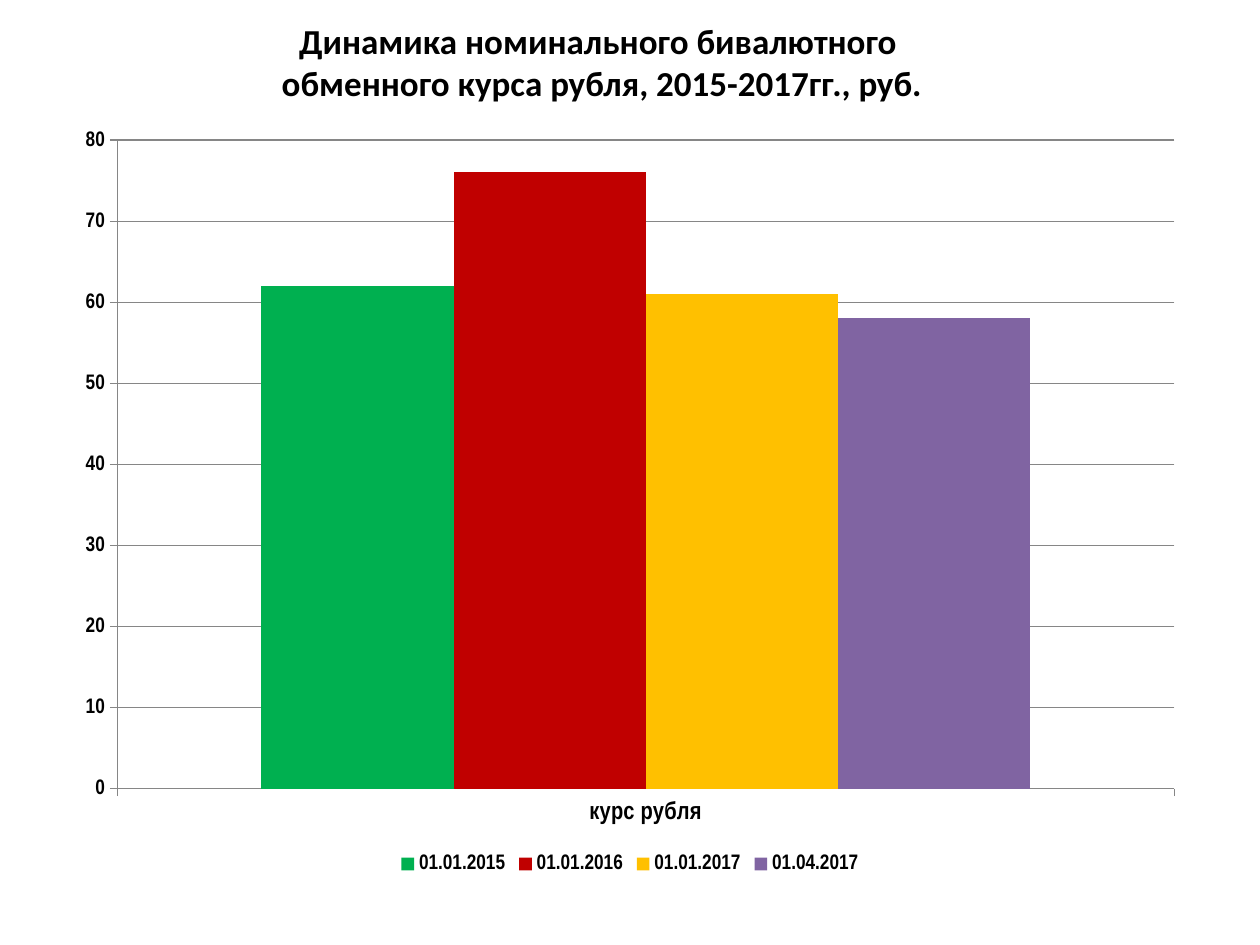
from dataclasses import dataclass

import pptx
import pptx.chart.data
import pptx.dml.color
import pptx.enum.chart
import pptx.enum.text
import pptx.util

EMU_PER_PX = 914400 / 126


@dataclass(frozen=True)
class Theme:
    text: str = "000000"
    background: str = "FFFFFF"
    line: str = "868686"
    title_font: str = "Calibri"
    chart_font: str = "Arial Narrow"
    title_size: int = 20
    category_size: int = 14
    label_size: int = 12
    base_size: int = 10


THEME = Theme()

RATES = [
    ("01.01.2015", 62, "00B050"),
    ("01.01.2016", 76, "C00000"),
    ("01.01.2017", 61, "FFC000"),
    ("01.04.2017", 58, "8064A2"),
]


def px(length):
    return pptx.util.Emu(round(length * EMU_PER_PX))


def color(value):
    return pptx.dml.color.RGBColor.from_string(value)


def style_font(font, name, size, bold=True):
    font.name = name
    font.size = pptx.util.Pt(size)
    font.bold = bold
    font.color.rgb = color(THEME.text)


def style_line(line):
    line.color.rgb = color(THEME.line)
    line.width = pptx.util.Pt(0.75)


def add_title(slide, left, top, width, height):
    title = slide.shapes.title
    title.left, title.top = px(left), px(top)
    title.width, title.height = px(width), px(height)
    text_frame = title.text_frame
    text_frame.text = (
        "Динамика номинального бивалютного \v"
        "обменного курса рубля, 2015-2017гг., руб."
    )
    text_frame.word_wrap = True
    text_frame.auto_size = pptx.enum.text.MSO_AUTO_SIZE.NONE
    text_frame.vertical_anchor = pptx.enum.text.MSO_ANCHOR.MIDDLE
    paragraph = text_frame.paragraphs[0]
    paragraph.alignment = pptx.enum.text.PP_ALIGN.CENTER
    style_font(paragraph.font, THEME.title_font, THEME.title_size)
    for run in paragraph.runs:
        style_font(run.font, THEME.title_font, THEME.title_size)


def add_rate_chart(slide, left, top, width, height):
    chart_data = pptx.chart.data.CategoryChartData()
    chart_data.categories = ["курс рубля"]
    for date, rate, _ in RATES:
        chart_data.add_series(date, [rate])
    chart = slide.shapes.add_chart(
        pptx.enum.chart.XL_CHART_TYPE.COLUMN_CLUSTERED,
        px(left), px(top), px(width), px(height), chart_data,
    ).chart
    style_font(chart.font, THEME.title_font, THEME.base_size, bold=False)
    chart.has_title = False

    plot = chart.plots[0]
    plot.gap_width = 150
    plot.overlap = 0
    plot.vary_by_categories = False
    for series, (_, _, fill_color) in zip(plot.series, RATES):
        series.format.fill.solid()
        series.format.fill.fore_color.rgb = color(fill_color)
        series.invert_if_negative = False

    for axis, size in (
        (chart.category_axis, THEME.category_size),
        (chart.value_axis, THEME.label_size),
    ):
        axis.major_tick_mark = pptx.enum.chart.XL_TICK_MARK.OUTSIDE
        axis.minor_tick_mark = pptx.enum.chart.XL_TICK_MARK.NONE
        style_font(axis.tick_labels.font, THEME.chart_font, size)
        style_line(axis.format.line)

    value_axis = chart.value_axis
    value_axis.minimum_scale = 0
    value_axis.maximum_scale = 80
    value_axis.major_unit = 10
    value_axis.has_major_gridlines = True
    style_line(value_axis.major_gridlines.format.line)

    chart.has_legend = True
    chart.legend.position = pptx.enum.chart.XL_LEGEND_POSITION.BOTTOM
    chart.legend.include_in_layout = False
    style_font(chart.legend.font, THEME.chart_font, THEME.label_size)


def main():
    presentation = pptx.Presentation()
    presentation.slide_width = px(1260)
    presentation.slide_height = px(945)
    slide = presentation.slides.add_slide(presentation.slide_layouts[5])
    slide.background.fill.solid()
    slide.background.fill.fore_color.rgb = color(THEME.background)
    add_title(slide, 35, 16, 1134, 90)
    add_rate_chart(slide, 63, 115, 1134, 764)
    presentation.save("out.pptx")


if __name__ == "__main__":
    main()
